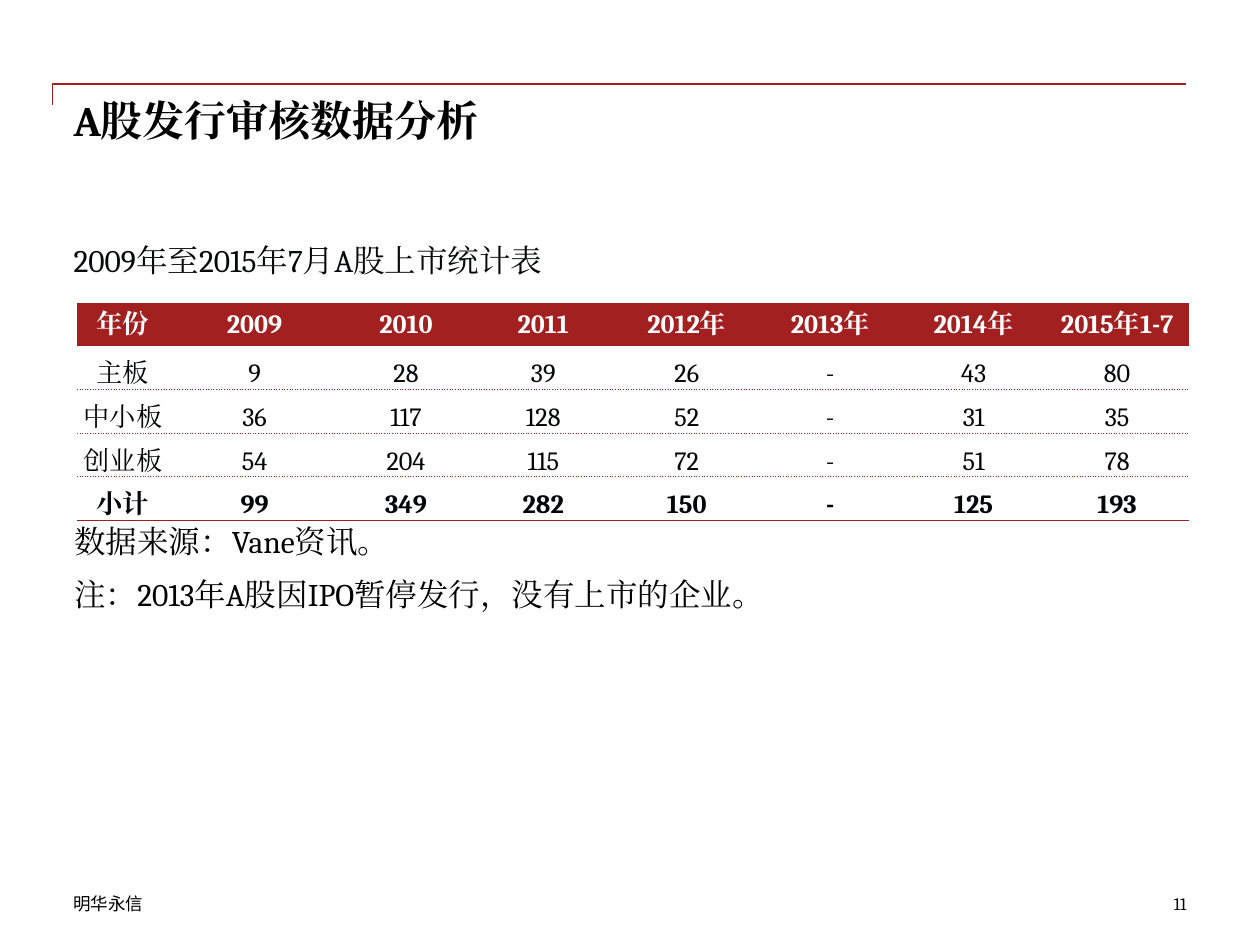
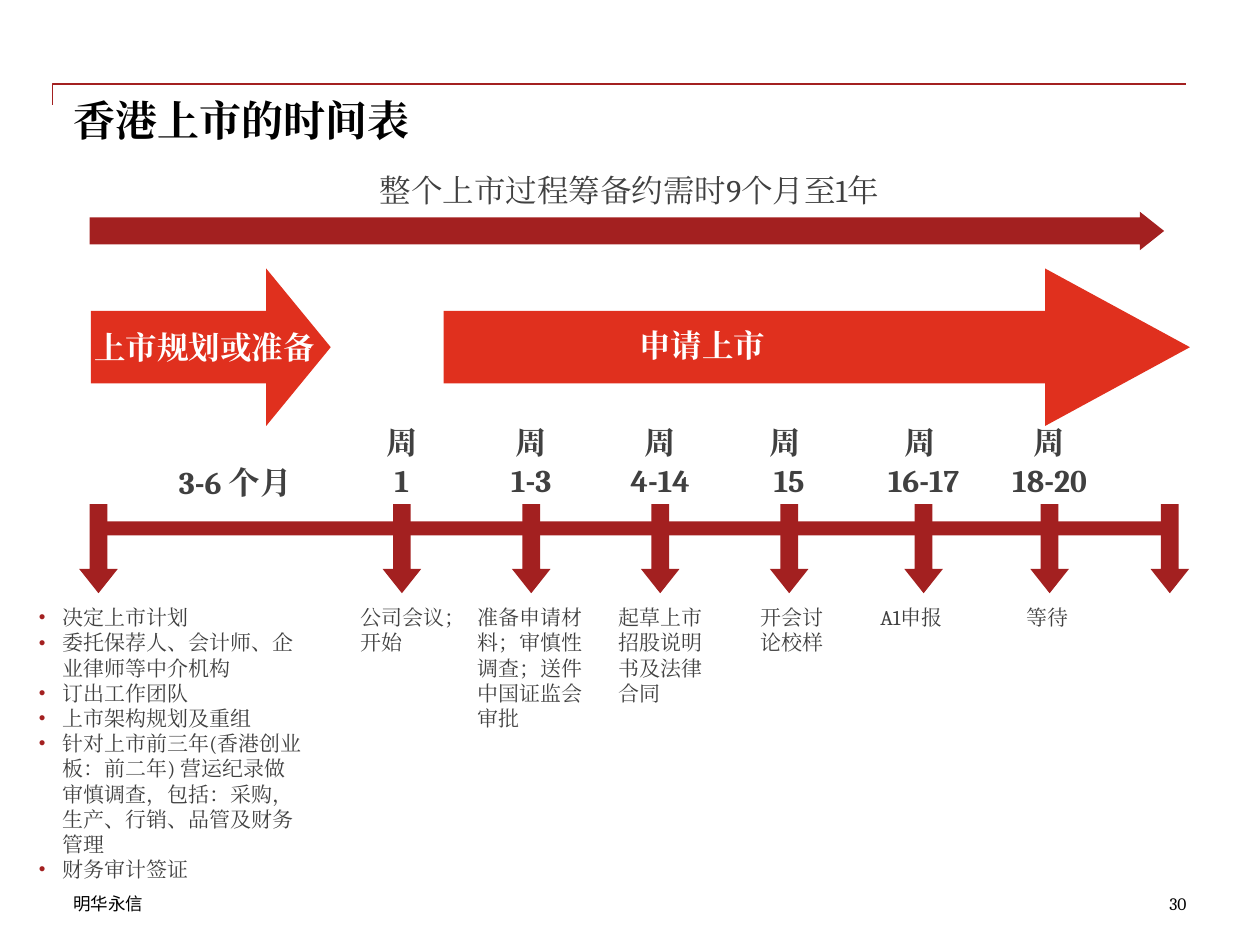
from lxml.etree import SubElement
from pptx import Presentation
from pptx.dml.color import RGBColor
from pptx.enum.shapes import MSO_CONNECTOR, MSO_SHAPE
from pptx.enum.text import MSO_ANCHOR, MSO_AUTO_SIZE, PP_ALIGN
from pptx.oxml.ns import qn
from pptx.util import Pt

# Content
TITLES = ["A股发行审核数据分析", "香港上市的时间表"]
PAGES = ["11", "30"]
FOOTER = "明华永信"
CAPTION = "2009年至2015年7月A股上市统计表"
LISTINGS = [
    ("年份", "2009", "2010", "2011", "2012年", "2013年", "2014年", "2015年1-7"),
    ("主板", "9", "28", "39", "26", "-", "43", "80"),
    ("中小板", "36", "117", "128", "52", "-", "31", "35"),
    ("创业板", "54", "204", "115", "72", "-", "51", "78"),
    ("小计", "99", "349", "282", "150", "-", "125", "193"),
]
SOURCE_NOTES = ["数据来源：Vane资讯。", "注：2013年A股因IPO暂停发行，没有上市的企业。"]
DURATION = "整个上市过程筹备约需时9个月至1年"
# text, text box (left, top, width), arrow (left, width, head length / height)
PHASES = [
    ("上市规划或准备 ", (44.6, 183.6, 148.3), (52, 137, 0.41)),
    ("申请上市", (341.3, 182.9, 120.2), (253.5, 426.5, 0.92)),
]
# centre of arrow, week, task, left and width of task
WEEKS = [
    (229.7, "周\n1", "公司会议；开始", 198.7, 82),
    (303.6, "周\n1-3", "准备申请材料；审慎性调查；送件中国证监会审批", 265.7, 80.6),
    (377.3, "周\n4-14", "起草上市招股说明书及法律合同", 346.3, 69),
    (451, "周 \n15", "开会讨论校样", 427.7, 52),
    (527.8, "周 \n16-17", "A1申报", 496, 70.6),
    (599.8, "周\n18-20", "等待", 579.6, 40),
]
ENDS = [56.3, 668.5]
PREPARATION = [
    "决定上市计划",
    "委托保荐人、会计师、企业律师等中介机构",
    "订出工作团队",
    "上市架构规划及重组",
    "针对上市前三年(香港创业板：前二年) 营运纪录做审慎调查，包括：采购，生产、行销、品管及财务管理",
    "财务审计签证",
]

# Shared look
COLORS = {"red": "A32020", "rule": "A31C1C", "orange": "E0301E", "grey": "404040",
          "black": "000000", "body": "070809", "cell": "030405", "white": "FFFFFF"}
FONT, FOOTER_FONT = "Cambria", "Noto Sans CJK SC"
LEFT, WIDTH = 42, 636
COL_WIDTHS = [52.5, 98, 75] + [82] * 5
ROW_HEIGHTS = [24] + [25] * 4
INSET = (7.2, 3.6, 7.2, 3.6)


def rgb(name):
    return RGBColor.from_string(COLORS[name])


def write(tf, lines, size, color, bold=False, align=PP_ALIGN.LEFT, font=FONT, after=0):
    for i, line in enumerate(lines):
        p = tf.paragraphs[0] if i == 0 else tf.add_paragraph()
        p.text = line
        p.alignment = align
        p.space_before, p.space_after = Pt(0), Pt(after)
        for r in p.runs:
            for key, value in {"size": Pt(size), "bold": bold, "name": font}.items():
                setattr(r.font, key, value)
            r.font.color.rgb = rgb(color)
            SubElement(r.font._element, qn("a:ea"), typeface=font)


def set_frame(tf, inset, anchor=MSO_ANCHOR.TOP):
    left, top, right, bottom = map(Pt, inset)
    frame = {"word_wrap": True, "auto_size": MSO_AUTO_SIZE.NONE, "vertical_anchor": anchor,
             "margin_left": left, "margin_top": top, "margin_right": right,
             "margin_bottom": bottom}
    for key, value in frame.items():
        setattr(tf, key, value)


def add_text(s, box, lines, size, color, inset=INSET, anchor=MSO_ANCHOR.TOP, **style):
    tf = s.shapes.add_textbox(*map(Pt, box)).text_frame
    set_frame(tf, inset, anchor)
    write(tf, lines, size, color, **style)


def fill_placeholder(sp, box, lines, size, color, inset=(0,) * 4, **style):
    sp.left, sp.top, sp.width, sp.height = map(Pt, box)
    set_frame(sp.text_frame, inset)
    write(sp.text_frame, lines, size, color, **style)


def set_bullets(tf, indent=0, color=None):
    for p in tf.paragraphs:
        pPr = p._p.get_or_add_pPr()
        pPr.set("marL", str(Pt(indent)))
        pPr.set("indent", str(-Pt(indent)))
        if color:
            SubElement(SubElement(pPr, qn("a:buClr")), qn("a:srgbClr"), val=COLORS[color])
            SubElement(pPr, qn("a:buSzPct"), val="90000")
            SubElement(pPr, qn("a:buFont"), typeface="Arial")
            SubElement(pPr, qn("a:buChar"), char="•")
        else:
            SubElement(pPr, qn("a:buNone"))


def add_solid(s, kind, box, color, adjustments=()):
    sp = s.shapes.add_shape(kind, *map(Pt, box))
    sp.shadow.inherit = False
    sp.fill.solid()
    sp.fill.fore_color.rgb = rgb(color)
    sp.line.fill.background()
    for i, value in enumerate(adjustments):
        sp.adjustments[i] = value


def add_corner_rule(s):
    # An elbow turned a quarter: short drop on the left, long rule to the right
    c = s.shapes.add_connector(MSO_CONNECTOR.ELBOW, *map(Pt, (360, 378, 348, -270)))
    spPr = c._element.spPr
    spPr.find(qn("a:xfrm")).set("rot", "5400000")
    spPr.find(qn("a:prstGeom")).set("prst", "bentConnector2")
    c.line.color.rgb = rgb("red")
    c.line.width = Pt(1)
    SubElement(spPr, qn("a:effectLst"))


def new_slide(prs, title, page):
    s = prs.slides.add_slide(prs.slide_layouts[1])
    fill_placeholder(s.shapes.title, (LEFT, 54, WIDTH, 72), [title], 24, "black", bold=True)
    add_corner_rule(s)
    add_text(s, (LEFT, 510, 204, 12), [FOOTER], 10, "black", (0,) * 4, font=FOOTER_FONT)
    add_text(s, (558, 510, 120, 12), [page], 10, "black", (0,) * 4, align=PP_ALIGN.RIGHT)
    return s


def set_border(cell, side, color, width, dash):
    tcPr = cell._tc.get_or_add_tcPr()
    ln = SubElement(tcPr, qn(f"a:{side}"), w=str(Pt(width)))
    SubElement(SubElement(ln, qn("a:solidFill")), qn("a:srgbClr"), val=COLORS[color])
    SubElement(ln, qn("a:prstDash"), val=dash)


def add_listing_table(s):
    box = (44, 173.5, sum(COL_WIDTHS), sum(ROW_HEIGHTS))
    table = s.shapes.add_table(len(LISTINGS), len(COL_WIDTHS), *map(Pt, box)).table
    style = table._tbl.tblPr.find(qn("a:tableStyleId"))
    style.text = "{2D5ABB26-0587-4C30-8999-92F81FD0307C}"  # no style, no grid
    table.horz_banding = False
    for col, width in zip(table.columns, COL_WIDTHS):
        col.width = Pt(width)
    solid, dotted = ("rule", 0.75, "solid"), ("red", 0.5, "sysDot")
    last = len(LISTINGS) - 1
    for i, row in enumerate(LISTINGS):
        table.rows[i].height = Pt(ROW_HEIGHTS[i])
        for j, text in enumerate(row):
            cell = table.cell(i, j)
            cell.margin_left = cell.margin_right = cell.margin_top = cell.margin_bottom = 0
            cell.vertical_anchor = MSO_ANCHOR.BOTTOM if i else MSO_ANCHOR.MIDDLE
            set_border(cell, "lnT", *(solid if i < 2 else dotted))
            set_border(cell, "lnB", *(solid if i in (0, last) else dotted))
            if i:
                cell.fill.background()
            else:
                cell.fill.solid()
                cell.fill.fore_color.rgb = rgb("red")
            write(cell.text_frame, [text], 15, "cell" if i else "white",
                  bold=i in (0, last), align=PP_ALIGN.CENTER)


def build_statistics(prs):
    s = new_slide(prs, TITLES[0], PAGES[0])
    body = s.placeholders[1]
    fill_placeholder(body, (LEFT, 138, WIDTH, 348), [CAPTION], 18, "body")
    set_bullets(body.text_frame)
    add_listing_table(s)
    add_text(s, (42.5, 298, WIDTH, 57), SOURCE_NOTES, 18, "black", (0,) * 4, after=9)


def build_timetable(prs):
    s = new_slide(prs, TITLES[1], PAGES[1])
    center = {"align": PP_ALIGN.CENTER}
    # Whole process
    add_text(s, (178.6, 94.3, 362, 29), [DURATION], 18, "grey", **center)
    add_solid(s, MSO_SHAPE.RIGHT_ARROW, (51.2, 121, 614, 22), "red", (0.7, 0.63))
    # Two phases
    for text, (left, top, width), (x, length, head) in PHASES:
        add_solid(s, MSO_SHAPE.RIGHT_ARROW, (x, 153.4, length, 90), "orange", (0.46, head))
        add_text(s, (left, top, width, 29), [text], 18, "white", bold=True, **center)
    # Time line with its arrows
    for x in ENDS + [week[0] for week in WEEKS]:
        add_solid(s, MSO_SHAPE.DOWN_ARROW, (x - 11, 288, 22, 51), "red", (0.46, 0.63))
    add_solid(s, MSO_SHAPE.RECTANGLE, (55.5, 298, 614, 8), "red")
    # Weeks and tasks
    low = {"anchor": MSO_ANCHOR.BOTTOM, "bold": True, **center}
    add_text(s, (84.2, 260.6, 104.4, 29), ["3-6 个月 "], 18, "grey", **low)
    for x, week, task, left, width in WEEKS:
        add_text(s, (x - 41.5, 238.3, 83, 50.4), [week], 18, "grey", **low)
        add_text(s, (left, 342, width, 90), [task], 12, "grey")
    body = s.placeholders[1]
    fill_placeholder(body, (15, 342, 166.3, 167), PREPARATION, 12, "grey", INSET)
    set_bullets(body.text_frame, 13.5, "red")


def main():
    prs = Presentation()
    prs.slide_width, prs.slide_height = Pt(720), Pt(540)
    build_statistics(prs)
    build_timetable(prs)
    prs.save("out.pptx")


if __name__ == "__main__":
    main()
